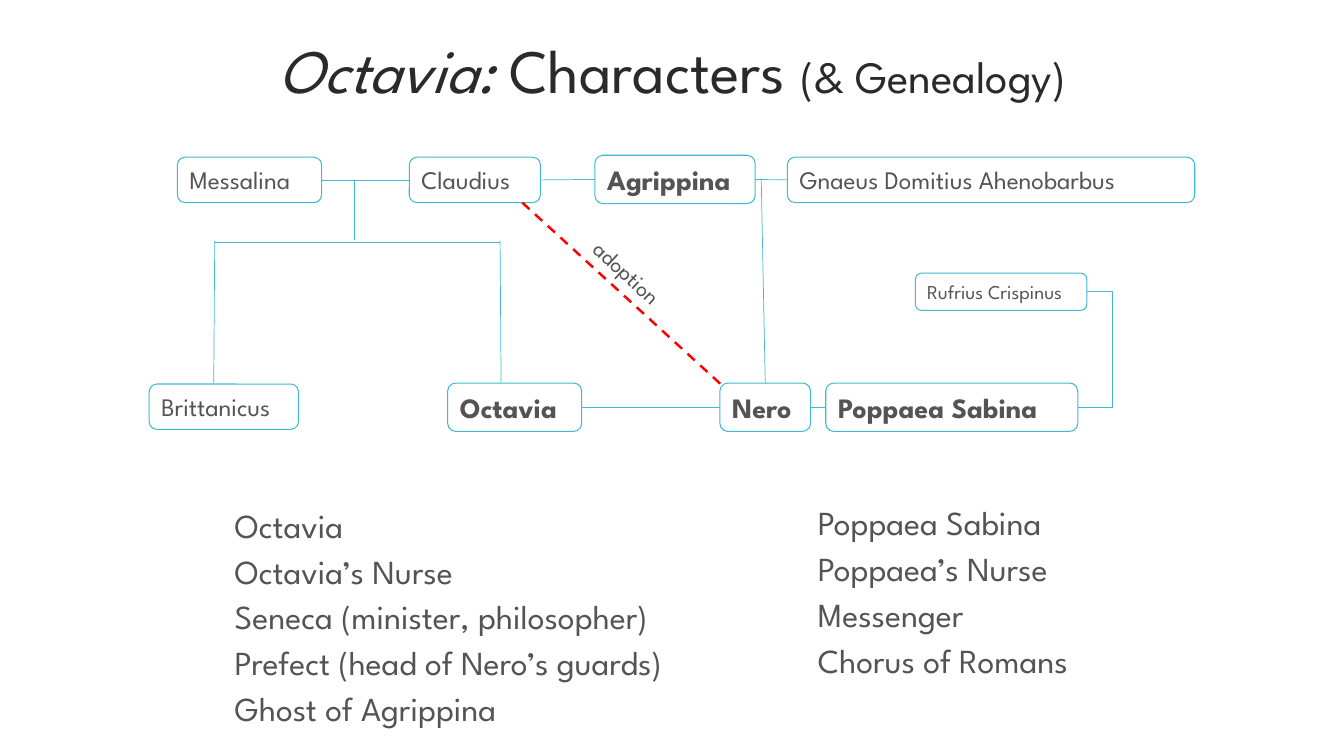
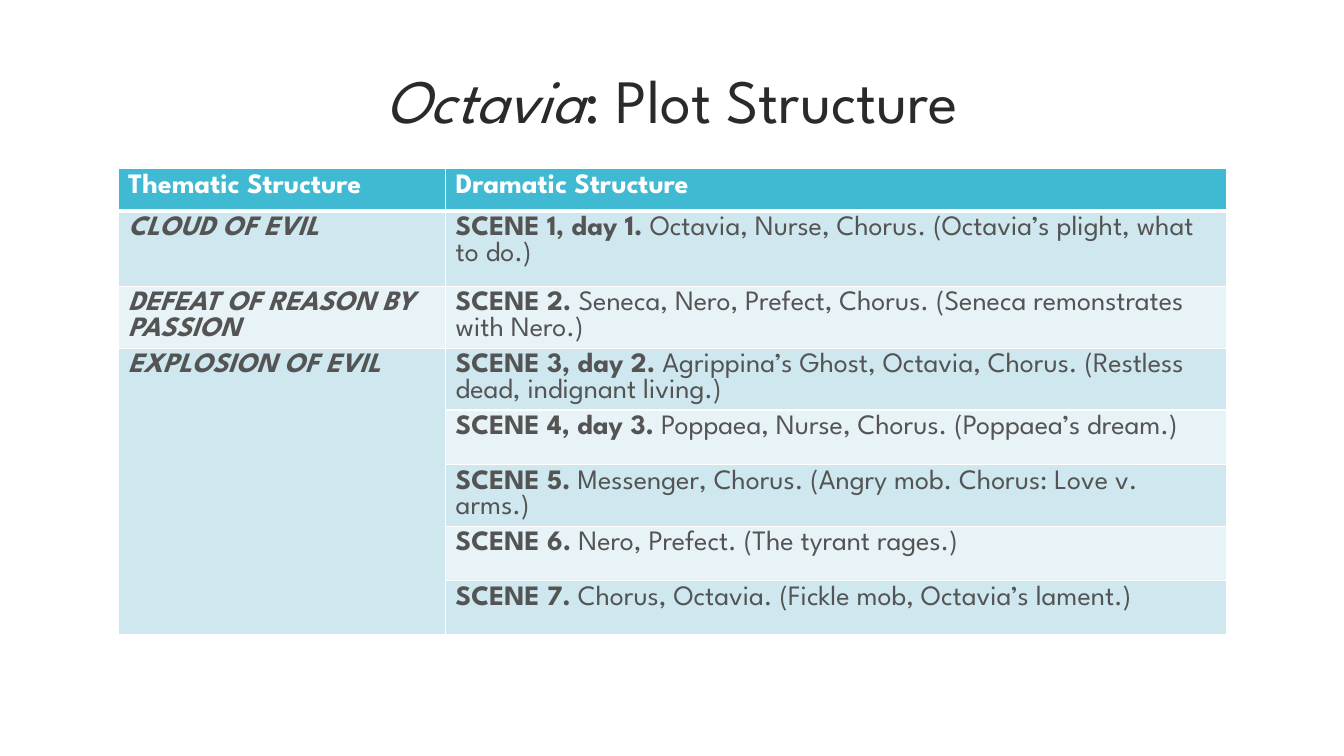
from dataclasses import dataclass

from lxml.etree import SubElement
from pptx import Presentation
from pptx.dml.color import RGBColor
from pptx.enum.dml import MSO_LINE
from pptx.enum.shapes import MSO_CONNECTOR, MSO_SHAPE
from pptx.enum.text import MSO_ANCHOR, PP_ALIGN
from pptx.oxml.ns import qn
from pptx.util import Inches, Pt


@dataclass(frozen=True)
class Theme:
    font: str = "League Spartan"
    ink: RGBColor = RGBColor(0x2A, 0x2A, 0x2A)
    text: RGBColor = RGBColor(0x54, 0x54, 0x54)
    accent: RGBColor = RGBColor(0x40, 0xBA, 0xD2)
    band_dark: RGBColor = RGBColor(0xCF, 0xE7, 0xEE)
    band_light: RGBColor = RGBColor(0xE8, 0xF3, 0xF7)
    white: RGBColor = RGBColor(0xFF, 0xFF, 0xFF)
    adoption: RGBColor = RGBColor(0xFF, 0x00, 0x00)
    title: int = 44
    subtitle: int = 32
    cast: int = 24
    strong: int = 20
    name: int = 18
    note: int = 16
    small: int = 14


THEME = Theme()
LEFT, BOTTOM, RIGHT, TOP = 1, 2, 3, 0


def write(paragraph, color, *runs):
    """Add runs given as (text, size, style); style may hold b and i."""
    for text, size, style in runs:
        run = paragraph.add_run()
        run.text = text
        run.font.name = THEME.font
        run.font.size = Pt(size)
        run.font.color.rgb = color
        run.font.bold = "b" in style
        run.font.italic = "i" in style


def connect(slide, start, end, color=THEME.accent, width=0.5, kind=MSO_CONNECTOR.STRAIGHT):
    """Draw a line; an end is an (x, y) point in inches or a (shape, side) pair."""
    line = slide.shapes.add_connector(kind, 0, 0, 0, 0)
    if isinstance(start[0], (int, float)):
        line.begin_x, line.begin_y = map(Inches, start)
    else:
        line.begin_connect(*start)
    if isinstance(end[0], (int, float)):
        line.end_x, line.end_y = map(Inches, end)
    else:
        line.end_connect(*end)
    line.line.color.rgb = color
    line.line.width = Pt(width)
    SubElement(line._element.spPr, qn("a:effectLst"))
    return line


prs = Presentation()
prs.slide_width, prs.slide_height = Inches(13.33), Inches(7.5)

# Slides with their titles
titles = [
    ((1.78, 0.34, 9.78, 0.77), [("Octavia:", THEME.title, "i"),
                                (" Characters ", THEME.title, ""),
                                ("(& Genealogy)", THEME.subtitle, "")]),
    ((0, 0.3, 13.33, 1.45), [("Octavia", THEME.title, "i"),
                             (": Plot Structure", THEME.title, "")]),
]
slides = []
for place, runs in titles:
    slide = prs.slides.add_slide(prs.slide_layouts[5])
    title = slide.shapes.title
    title.left, title.top, title.width, title.height = map(Inches, place)
    title.text_frame.vertical_anchor = MSO_ANCHOR.MIDDLE
    heading = title.text_frame.paragraphs[0]
    heading.alignment = PP_ALIGN.CENTER
    heading.line_spacing = 0.9
    write(heading, THEME.ink, *runs)
    slides.append(slide)
characters, plot = slides

# Family tree: framed names, then the two cast lists without a frame
boxes = [
    (["Messalina"], (1.76, 1.56, 1.43, 0.45), THEME.name, ""),
    (["Claudius"], (4.06, 1.56, 1.3, 0.45), THEME.name, ""),
    (["Agrippina"], (5.9, 1.54, 1.59, 0.48), THEME.strong, "b"),
    (["Gnaeus Domitius Ahenobarbus"], (7.81, 1.56, 4.04, 0.45), THEME.name, ""),
    (["Rufrius Crispinus"], (9.08, 2.71, 1.7, 0.37), THEME.small, ""),
    (["Brittanicus"], (1.48, 3.81, 1.48, 0.45), THEME.name, ""),
    (["Octavia"], (4.44, 3.8, 1.33, 0.48), THEME.strong, "b"),
    (["Nero"], (7.14, 3.8, 0.9, 0.48), THEME.strong, "b"),
    (["Poppaea Sabina"], (8.19, 3.8, 2.5, 0.48), THEME.strong, "b"),
    (["Octavia", "Octavia’s Nurse", "Seneca (minister, philosopher)",
      "Prefect (head of Nero’s guards)", "Ghost of Agrippina"],
     (2.1, 4.77, 5.58, 2.66), THEME.cast, ""),
    (["Poppaea Sabina", "Poppaea’s Nurse", "Messenger", "Chorus of Romans"],
     (7.91, 4.77, 3.34, 2.15), THEME.cast, ""),
]
people = {}
for lines, place, size, style in boxes:
    box = characters.shapes.add_shape(MSO_SHAPE.ROUNDED_RECTANGLE, *map(Inches, place))
    box.shadow.inherit = False
    box.fill.background()
    frame = box.text_frame
    frame.word_wrap = True
    if len(lines) == 1:
        people[lines[0]] = box
        box.line.color.rgb = THEME.accent
        box.line.width = Pt(0.75)
        frame.vertical_anchor = MSO_ANCHOR.MIDDLE
    else:
        box.line.fill.background()
        frame.vertical_anchor = MSO_ANCHOR.TOP
    for index, line in enumerate(lines):
        paragraph = frame.paragraphs[0] if index == 0 else frame.add_paragraph()
        paragraph.alignment = PP_ALIGN.LEFT
        if len(lines) > 1:
            paragraph.line_spacing = 1.14
        write(paragraph, THEME.text, (line, size, style))

couples = [
    ("Messalina", "Claudius"),
    ("Claudius", "Agrippina"),
    ("Agrippina", "Gnaeus Domitius Ahenobarbus"),
    ("Octavia", "Nero"),
    ("Nero", "Poppaea Sabina"),
]
for first, second in couples:
    connect(characters, (people[first], RIGHT), (people[second], LEFT))

descents = [
    ((3.51, 1.8), (3.51, 2.38)),
    ((2.12, 2.4), (4.96, 2.4)),
    ((2.13, 2.39), (2.12, 3.8)),
    ((4.96, 2.39), (4.97, 3.8)),
    ((7.55, 1.77), (people["Nero"], TOP)),
]
for start, end in descents:
    connect(characters, start, end)

first_marriage = connect(characters, (people["Rufrius Crispinus"], RIGHT),
                         (people["Poppaea Sabina"], RIGHT), kind=MSO_CONNECTOR.ELBOW)
geometry = first_marriage._element.spPr.find(qn("a:prstGeom"))
SubElement(geometry.find(qn("a:avLst")), qn("a:gd"), name="adj1", fmla="val -284000")

adoption = connect(characters, (5.18, 2.01), (7.18, 3.84), THEME.adoption, 1.75)
adoption.line.dash_style = MSO_LINE.DASH
adoption_label = characters.shapes.add_textbox(*map(Inches, (5.69, 2.59, 1.21, 0.37)))
adoption_label.rotation = 43
adoption_label.text_frame.word_wrap = True
write(adoption_label.text_frame.paragraphs[0], THEME.text, ("adoption", THEME.note, ""))

# Plot table
themes = ["CLOUD OF EVIL", "DEFEAT OF REASON BY PASSION", "EXPLOSION OF EVIL"]
scenes = [
    ("SCENE 1, day 1.", " Octavia, Nurse, Chorus. (Octavia’s plight, what to do.)"),
    ("SCENE 2.", " Seneca, Nero, Prefect, Chorus. (Seneca remonstrates with Nero.)"),
    ("SCENE 3, day 2.", " Agrippina’s Ghost, Octavia, Chorus. (Restless dead, indignant living.)"),
    ("SCENE 4, day 3.", " Poppaea, Nurse, Chorus. (Poppaea’s dream.)"),
    ("SCENE 5.", " Messenger, Chorus. (Angry mob. Chorus: Love v. arms.)"),
    ("SCENE 6.", " Nero, Prefect. (The tyrant rages.)"),
    ("SCENE 7.", " Chorus, Octavia. (Fickle mob, Octavia’s lament.)"),
]
row_heights = [0.42, 0.75] + [0.54] * 6
structure = plot.shapes.add_table(
    len(row_heights), 2, Inches(1.17), Inches(1.67), Inches(11), Inches(sum(row_heights))).table
for column, width in zip(structure.columns, (3.25, 7.75)):
    column.width = Inches(width)
for row, height in zip(structure.rows, row_heights):
    row.height = Inches(height)

for row_index, row in enumerate(structure.rows):
    for cell in row.cells:
        edges = {"a:lnL": 1, "a:lnR": 1,
                 "a:lnT": 3 if row_index == 1 else 1,
                 "a:lnB": 3 if row_index == 0 else 1}
        for tag, width in edges.items():
            edge = SubElement(cell._tc.get_or_add_tcPr(), qn(tag), w=str(Pt(width)))
            SubElement(SubElement(edge, qn("a:solidFill")), qn("a:srgbClr"), val=str(THEME.white))
        cell.fill.solid()
        if row_index == 0:
            cell.fill.fore_color.rgb = THEME.accent
        else:
            cell.fill.fore_color.rgb = THEME.band_dark if row_index % 2 else THEME.band_light
structure.cell(len(themes), 0).merge(structure.cell(len(scenes), 0))

for column_index, header in enumerate(("Thematic Structure", "Dramatic Structure")):
    write(structure.cell(0, column_index).text_frame.paragraphs[0], THEME.white,
          (header, THEME.strong, "b"))
for row_index, theme_name in enumerate(themes, 1):
    write(structure.cell(row_index, 0).text_frame.paragraphs[0], THEME.text,
          (theme_name, THEME.strong, "bi"))
for row_index, (scene, action) in enumerate(scenes, 1):
    write(structure.cell(row_index, 1).text_frame.paragraphs[0], THEME.text,
          (scene, THEME.strong, "b"), (action, THEME.strong, ""))

prs.save("out.pptx")
